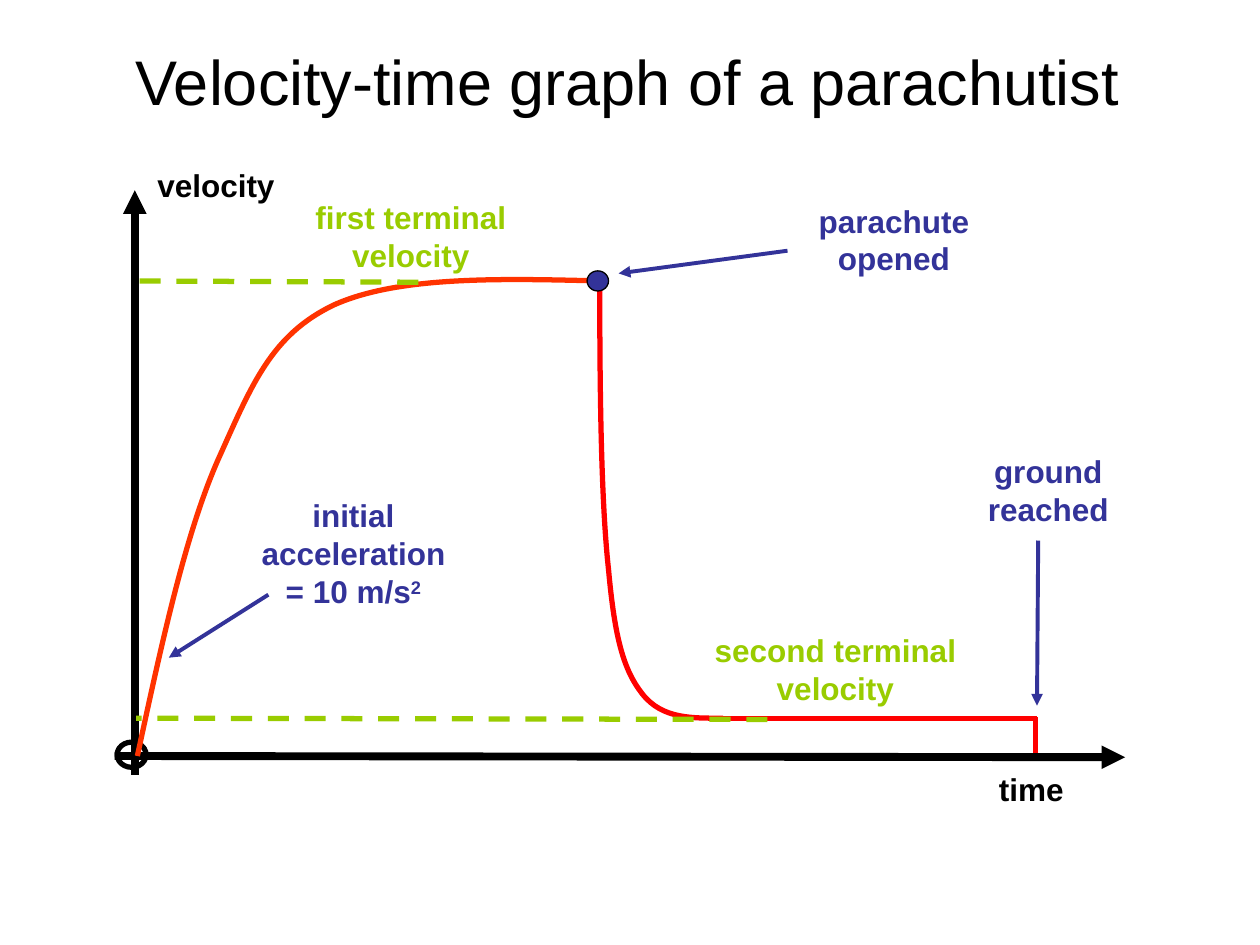
from dataclasses import dataclass

from lxml.etree import SubElement
from pptx import Presentation
from pptx.dml.color import RGBColor as RGB
from pptx.enum.dml import MSO_LINE_DASH_STYLE as Dash
from pptx.enum.shapes import MSO_CONNECTOR as Conn, MSO_SHAPE as Shape
from pptx.enum.text import MSO_ANCHOR as Anchor, PP_ALIGN as Align
from pptx.oxml.ns import qn
from pptx.util import Inches, Pt


@dataclass(frozen=True)
class Theme:
    font: str = "Arial"
    title_size: int = 36
    label_size: int = 18
    ink: RGB = RGB(0, 0, 0)
    note: RGB = RGB(0x33, 0x33, 0x99)
    level: RGB = RGB(0x99, 0xCC, 0)
    rise: RGB = RGB(0xFF, 0x33, 0)
    fall: RGB = RGB(0xFF, 0, 0)
    axis_width: float = 4.5
    curve_width: float = 3
    pointer_width: float = 2.25
    outline_width: float = 0.75


THEME = Theme()


@dataclass(frozen=True)
class Label:
    text: str
    box: tuple[float, float, float, float]
    color: RGB = THEME.ink
    align: Align = Align.CENTER
    superscript: str = ""
    size: int = THEME.label_size
    bold: bool = True


@dataclass(frozen=True)
class Line:
    start: tuple[float, float]
    end: tuple[float, float]
    color: RGB
    width: float
    arrow: bool = False
    dashed: bool = False


@dataclass(frozen=True)
class Curve:
    points: tuple[tuple[float, float], ...]
    color: RGB


@dataclass(frozen=True)
class Dot:
    box: tuple[float, float, float, float]
    width: float
    fill: RGB | None = None


def draw_label(shapes, label: Label) -> None:
    tf = shapes.add_textbox(*map(Inches, label.box)).text_frame
    tf.word_wrap = True
    tf.vertical_anchor = Anchor.MIDDLE
    p = tf.paragraphs[0]
    p.alignment = label.align
    p.font.name, p.font.size = THEME.font, Pt(label.size)
    p.font.bold, p.font.color.rgb = label.bold, label.color
    p.add_run().text = label.text
    if label.superscript:
        r = p.add_run()
        r.text = label.superscript
        r._r.get_or_add_rPr().set("baseline", "30000")


def draw_line(shapes, line: Line) -> None:
    sp = shapes.add_connector(Conn.STRAIGHT, *map(Inches, line.start + line.end))
    sp.line.color.rgb, sp.line.width = line.color, Pt(line.width)
    if line.dashed:
        sp.line.dash_style = Dash.DASH
    if line.arrow:
        SubElement(sp.line._get_or_add_ln(), qn("a:tailEnd"), type="triangle")
    SubElement(sp._element.spPr, qn("a:effectLst"))


def draw_curve(shapes, curve: Curve) -> None:
    start, *controls = [(Inches(x), Inches(y)) for x, y in curve.points]
    builder = shapes.build_freeform(*start)
    builder.add_line_segments(controls, close=False)
    sp = builder.convert_to_shape()
    sp.shadow.inherit = False
    sp.fill.background()
    sp.line.color.rgb, sp.line.width = curve.color, Pt(THEME.curve_width)
    outline = next(sp._element.iter(qn("a:path")))
    segments = outline.findall(qn("a:lnTo"))
    for i in range(0, len(segments), 3):
        bezier = SubElement(outline, qn("a:cubicBezTo"))
        for segment in segments[i:i + 3]:
            bezier.append(segment[0])
            outline.remove(segment)


def draw_dot(shapes, dot: Dot) -> None:
    sp = shapes.add_shape(Shape.OVAL, *map(Inches, dot.box))
    sp.shadow.inherit = False
    sp.line.color.rgb, sp.line.width = THEME.ink, Pt(dot.width)
    if dot.fill is None:
        sp.fill.background()
    else:
        sp.fill.solid()
        sp.fill.fore_color.rgb = dot.fill


def axis(start: tuple[float, float], end: tuple[float, float]) -> Line:
    return Line(start, end, THEME.ink, THEME.axis_width, arrow=True)


def pointer(start: tuple[float, float], end: tuple[float, float]) -> Line:
    return Line(start, end, THEME.note, THEME.pointer_width, arrow=True)


def level(start: tuple[float, float], end: tuple[float, float]) -> Line:
    return Line(start, end, THEME.level, THEME.curve_width, dashed=True)


def descent(start: tuple[float, float], end: tuple[float, float]) -> Line:
    return Line(start, end, THEME.fall, THEME.curve_width)


DRAW = {Label: draw_label, Line: draw_line, Curve: draw_curve, Dot: draw_dot}

GRAPH = (
    axis((1.07, 6.15), (1.07, 1.51)),
    axis((0.91, 6), (8.93, 6.01)),
    Dot((0.93, 5.89, 0.23, 0.2), THEME.curve_width),
    Label("velocity", (1.15, 1.27, 1.41, 0.4), align=Align.LEFT),
    Label("time", (7.83, 6.06, 0.81, 0.4), align=Align.LEFT),
    Curve(((1.09, 6), (1.28, 5.12), (1.47, 4.24), (1.73, 3.65),
           (2, 3.05), (2.15, 2.66), (2.65, 2.42),
           (3.16, 2.19), (3.97, 2.21), (4.77, 2.23)), THEME.rise),
    level((3.32, 2.24), (1.08, 2.23)),
    Label("first terminal velocity", (2.32, 1.52, 1.88, 0.7), THEME.level),
    Label("initial acceleration = 10 m/s", (1.9, 3.89, 1.81, 1), THEME.note,
          superscript="2"),
    pointer((2.13, 4.72), (1.34, 5.22)),
    Label("Velocity-time graph of a parachutist", (0.48, 0.29, 9, 0.69),
          size=THEME.title_size, bold=False),
    Curve(((4.76, 2.24), (4.76, 3.1), (4.77, 3.97), (4.83, 4.52),
           (4.88, 5.07), (4.95, 5.32), (5.1, 5.51),
           (5.26, 5.71), (5.5, 5.7), (5.74, 5.7)), THEME.fall),
    descent((5.71, 5.7), (8.23, 5.7)),
    level((6.09, 5.71), (1.08, 5.7)),
    Label("second terminal velocity", (5.49, 4.96, 2.28, 0.7), THEME.level),
    Dot((4.66, 2.15, 0.17, 0.16), THEME.outline_width, THEME.note),
    Label("parachute opened", (6.38, 1.55, 1.43, 0.7), THEME.note),
    pointer((6.25, 1.99), (4.91, 2.17)),
    descent((8.22, 5.69), (8.22, 5.98)),
    Label("ground reached", (7.7, 3.54, 1.24, 0.7), THEME.note),
    pointer((8.24, 4.29), (8.23, 5.6)),
)


def main() -> None:
    """Build the velocity-time graph slide."""
    prs = Presentation()
    prs.slide_width, prs.slide_height = Inches(10), Inches(7.5)
    slide = prs.slides.add_slide(prs.slide_layouts[6])
    for item in GRAPH:
        DRAW[type(item)](slide.shapes, item)
    prs.save("out.pptx")


if __name__ == "__main__":
    main()
